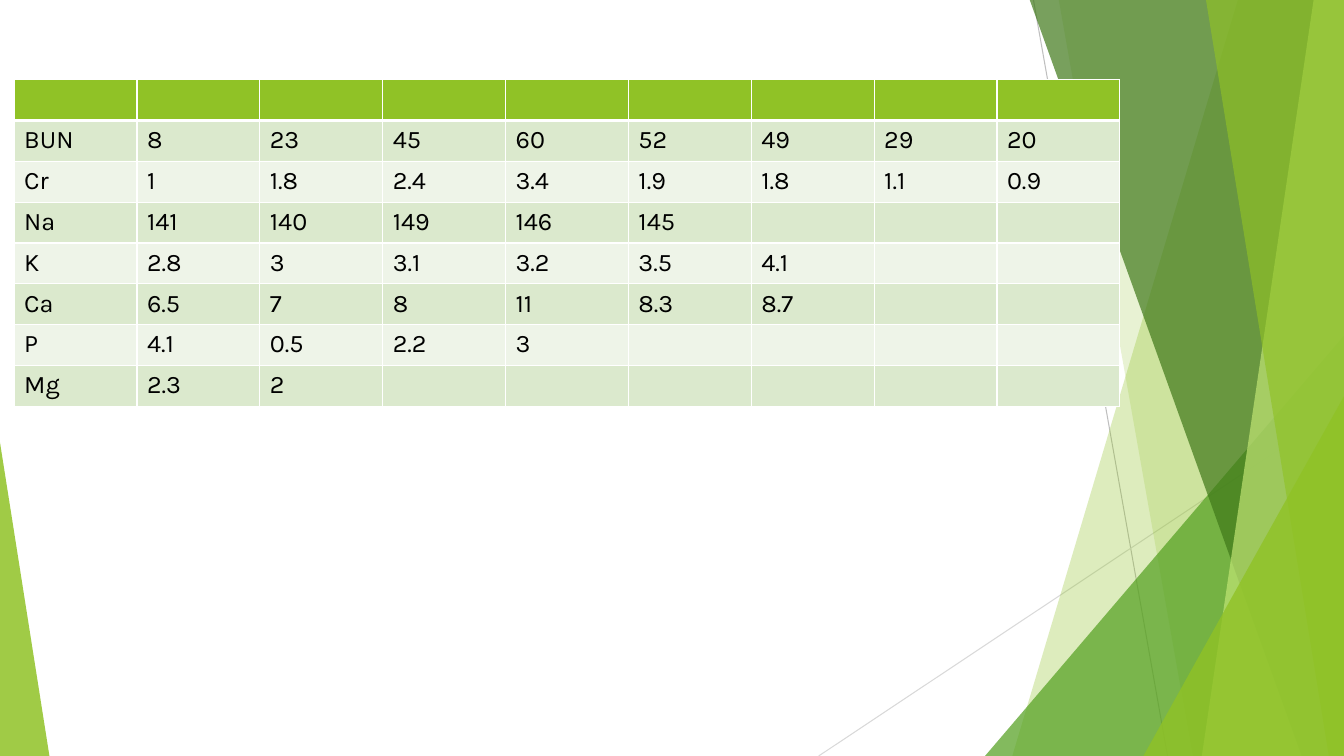
from dataclasses import dataclass

from lxml import etree
from pptx import Presentation
from pptx import util as u
from pptx.dml.color import RGBColor
from pptx.enum import shapes
from pptx.oxml import ns

COLORS = {
    "white": "FFFFFF", "black": "000000", "green": "90C226", "leaf": "54A021",
    "forest": "3F7819", "lime": "C0E474", "band_dark": "DBE9CD",
    "band_light": "EEF4E8", "gray": "BFBFBF", "pale_gray": "D9D9D9",
}
WIDTH, HEIGHT, BLEED_TOP = 13.33, 7.5, -0.01
FONT = "Karla"


@dataclass
class Ray:
    x1: float
    y1: float
    x2: float
    y2: float
    color: str


@dataclass
class Facet:
    top_x: float
    bottom_x: float
    color: str
    opacity: int


@dataclass
class Corner:
    left: float
    top: float
    width: float
    apex: float
    color: str
    opacity: int


RAYS = [Ray(10.25, 0, 11.58, HEIGHT, "gray"), Ray(WIDTH, 4.03, 8.12, HEIGHT, "pale_gray")]
PANELS = [
    Facet(12.28, 10.04, "green", 30),
    Facet(10.5, 11.83, "green", 20),
    Corner(9.77, 3.33, 3.56, 1, "leaf", 72),
    Facet(10.21, 12.91, "forest", 70),
    Facet(13.03, 11.92, "lime", 70),
    Facet(11.96, 13.18, "green", 65),
    Corner(11.34, 3.93, 1.99, 1, "green", 80),
    Corner(0, 4.39, 0.49, 0, "green", 85),
]
LABS = [
    ("BUN", "8", "23", "45", "60", "52", "49", "29", "20"),
    ("Cr", "1", "1.8", "2.4", "3.4", "1.9", "1.8", "1.1", "0.9"),
    ("Na", "141", "140", "149", "146", "145"),
    ("K", "2.8", "3", "3.1", "3.2", "3.5", "4.1"),
    ("Ca", "6.5", "7", "8", "11", "8.3", "8.7"),
    ("P", "4.1", "0.5", "2.2", "3"),
    ("Mg", "2.3", "2"),
]


def rgb(name: str) -> RGBColor:
    return RGBColor.from_string(COLORS[name])


def draw_ray(s, ray: Ray) -> None:
    ends = [u.Inches(v) for v in (ray.x1, ray.y1, ray.x2, ray.y2)]
    cx = s.shapes.add_connector(shapes.MSO_CONNECTOR.STRAIGHT, *ends)
    cx.line.color.rgb = rgb(ray.color)
    cx.line.width = u.Pt(0.75)
    etree.SubElement(cx._element.spPr, ns.qn("a:effectLst"))


def add_facet(s, facet: Facet):
    pts = [(u.Inches(x), u.Inches(y)) for x, y in (
        (facet.top_x, BLEED_TOP), (WIDTH, BLEED_TOP),
        (WIDTH, HEIGHT), (facet.bottom_x, HEIGHT))]
    fb = s.shapes.build_freeform(*pts[0])
    fb.add_line_segments(pts[1:], close=True)
    return fb.convert_to_shape()


def add_corner(s, corner: Corner):
    sp = s.shapes.add_shape(
        shapes.MSO_SHAPE.ISOSCELES_TRIANGLE, u.Inches(corner.left), u.Inches(corner.top),
        u.Inches(corner.width), u.Inches(HEIGHT - corner.top))
    sp.adjustments[0] = corner.apex
    return sp


def draw_panel(s, panel: Facet | Corner) -> None:
    sp = add_facet(s, panel) if isinstance(panel, Facet) else add_corner(s, panel)
    sp.shadow.inherit = False
    sp.line.fill.background()
    sp.fill.solid()
    sp.fill.fore_color.rgb = rgb(panel.color)
    clr = sp._element.spPr.find(ns.qn("a:solidFill"))[0]
    etree.SubElement(clr, ns.qn("a:alpha"), val=str(panel.opacity * 1000))


def set_borders(cell, top: float, bottom: float) -> None:
    tcPr = cell._tc.get_or_add_tcPr()
    for side, width in (("L", 1), ("R", 1), ("T", top), ("B", bottom)):
        ln = etree.SubElement(tcPr, ns.qn(f"a:ln{side}"), w=str(u.Pt(width)))
        fill = etree.SubElement(ln, ns.qn("a:solidFill"))
        etree.SubElement(fill, ns.qn("a:srgbClr"), val=COLORS["white"])


def draw_labs(s) -> None:
    rows, cols = len(LABS) + 1, len(LABS[0])
    tbl = s.shapes.add_table(rows, cols, u.Inches(0.14), u.Inches(0.79),
                             u.Inches(10.97), u.Inches(3.24)).table
    for i, values in enumerate([(), *LABS]):
        band = "green" if i == 0 else "band_dark" if i % 2 else "band_light"
        for j in range(cols):
            cell = tbl.cell(i, j)
            set_borders(cell, 3 if i == 1 else 1, 3 if i == 0 else 1)
            cell.fill.solid()
            cell.fill.fore_color.rgb = rgb(band)
            if j < len(values):
                cell.text = values[j]
                p = cell.text_frame.paragraphs[0]
                p.font.name = FONT
                p.font.size = u.Pt(18)
                p.font.bold = False
                p.font.color.rgb = rgb("black")


def main() -> None:
    """Build the lab results slide and save it."""
    prs = Presentation()
    prs.slide_width, prs.slide_height = u.Inches(WIDTH), u.Inches(HEIGHT)
    s = prs.slides.add_slide(prs.slide_layouts[6])
    for ray in RAYS:
        draw_ray(s, ray)
    for panel in PANELS:
        draw_panel(s, panel)
    draw_labs(s)
    prs.save("out.pptx")


if __name__ == "__main__":
    main()
